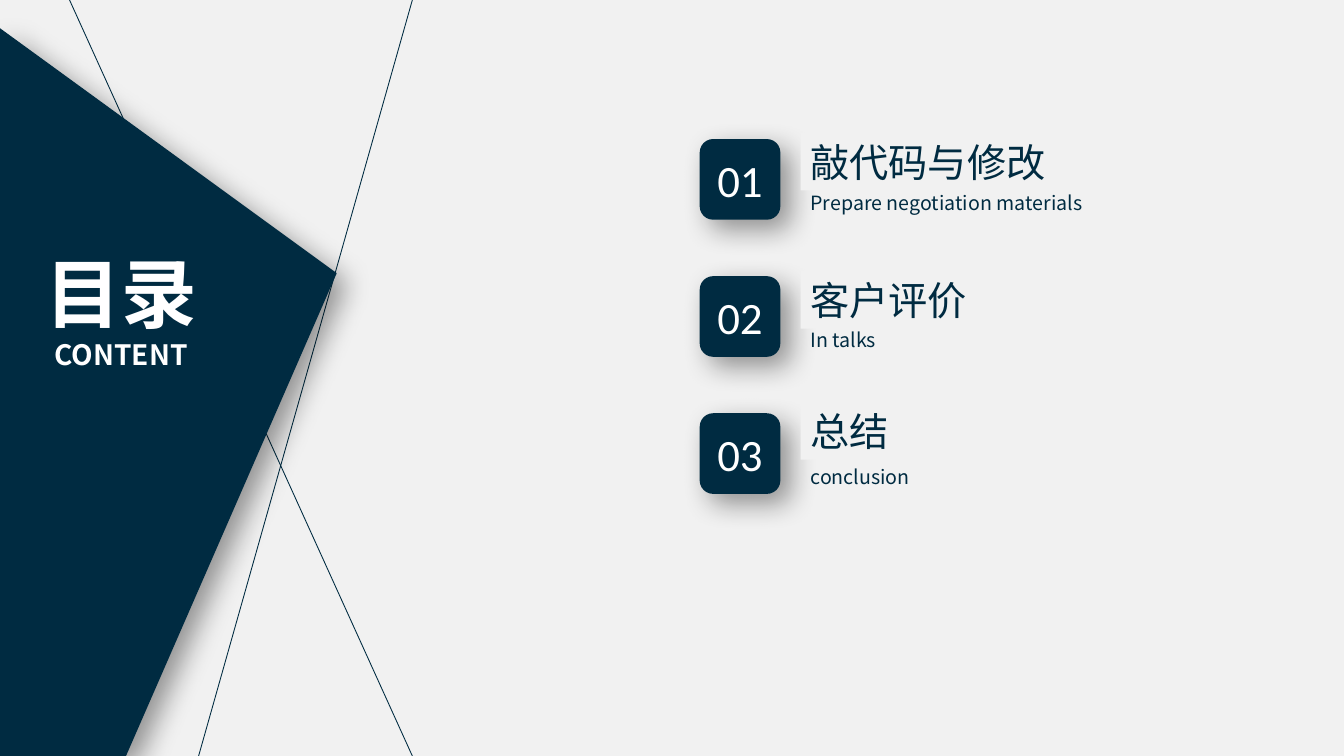
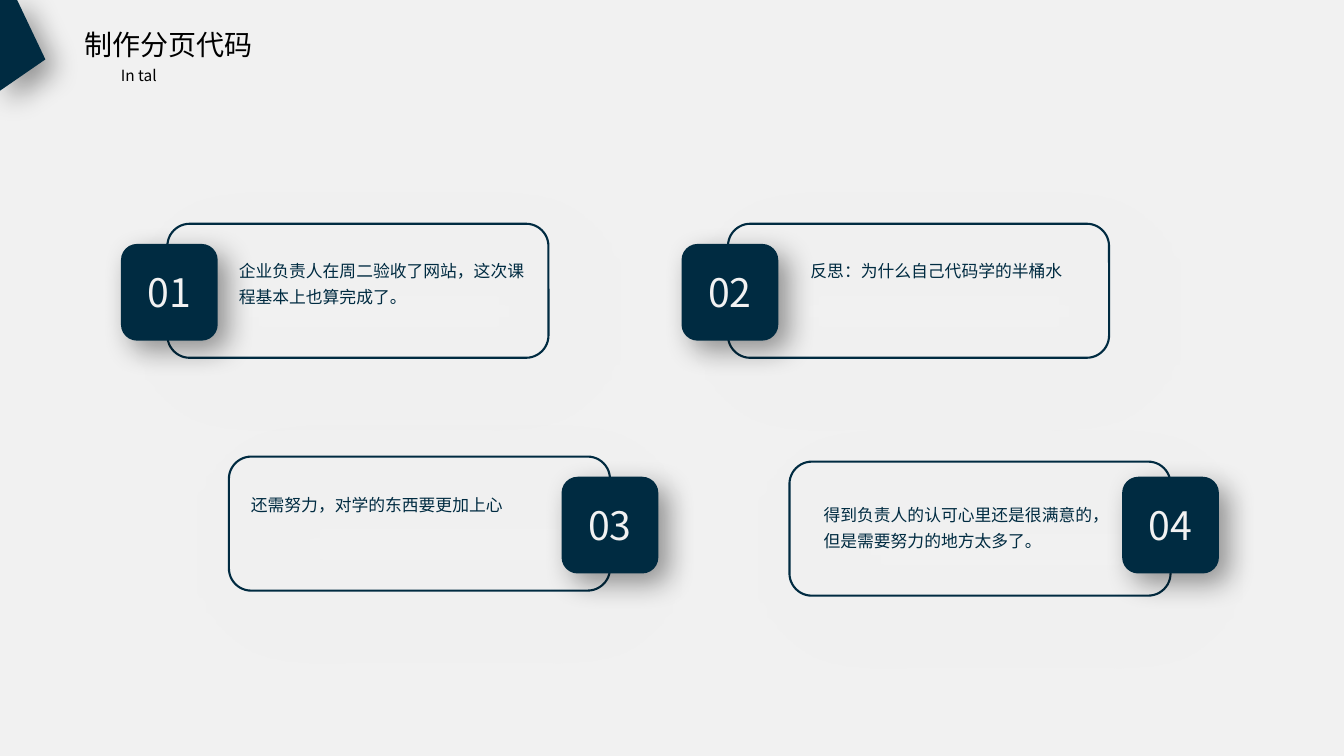
import pptx
import pptx.util
import pptx.dml.color
import pptx.enum.shapes
import pptx.enum.text
import pptx.oxml.ns
import lxml.etree

PX = 9144  # 100 px to the inch
WIDE, HIGH = 1333, 750
HUES = {
    "navy": "002B41", "back": "F1F1F1", "white": "FFFFFF",
    "pale": "F2F2F2", "black": "000000", "gray": "808080",
}
SANS, NUMS = "Noto Sans CJK SC", "Calibri"
DEEP = ("black", 40, 20, 10)  # hue, opacity %, blur pt, distance pt
SOFT = ("gray", 20, 50, 20)
FORM = pptx.enum.shapes.MSO_SHAPE
ALIGN = pptx.enum.text.PP_ALIGN
ANCHOR = pptx.enum.text.MSO_ANCHOR
Pt = pptx.util.Pt

TOPICS = [  # title, subtitle, title offset from its badge
    ("敲代码与修改", "Prepare negotiation materials", -6),
    ("客户评价", "In talks", -5),
    ("总结", "conclusion", -11),
]
CARDS = [  # words, frame top, left and top of the words
    ("企业负责人在周二验收了网站，这次课程基本上也算完成了。", 222, 227, 248),
    ("反思：为什么自己代码学的半桶水", 222, 794, 248),
    ("还需努力，对学的东西要更加上心", 453, 239, 480),
    ("得到负责人的认可心里还是很满意的，但是需要努力的地方太多了。", 458, 807, 490),
]


def hue(name):
    return pptx.dml.color.RGBColor.from_string(HUES[name])


def node(top, tag, **attrs):
    return lxml.etree.SubElement(top, pptx.oxml.ns.qn(tag), attrs)


# Shapes
def paint(shape, fill=None, line=None, shade=None):
    if fill:
        shape.fill.solid()
        shape.fill.fore_color.rgb = hue(fill)
    else:
        shape.fill.background()
    if line:
        shape.line.color.rgb = hue(line)
        shape.line.width = Pt(1.5)
    else:
        shape.line.fill.background()
    shape.shadow.inherit = False
    if shade:
        name, alpha, blur, dist = shade
        list_ = shape._element.spPr.find(pptx.oxml.ns.qn("a:effectLst"))
        cast = node(list_, "a:outerShdw", blurRad=str(Pt(blur)), dist=str(Pt(dist)),
                    dir=str(45 * 60000), algn="tl", rotWithShape="0")
        tint = node(cast, "a:srgbClr", val=HUES[name])
        node(tint, "a:alpha", val=str(alpha * 1000))


def box(slide, form, x, y, w, h, **look):
    shape = slide.shapes.add_shape(form, x * PX, y * PX, w * PX, h * PX)
    paint(shape, **look)
    return shape


def kite(slide, dots):
    pen = slide.shapes.build_freeform(*dots[0], scale=PX)
    pen.add_line_segments(dots[1:], close=True)
    paint(pen.convert_to_shape(), "navy", shade=DEEP)


def rule(slide, *ends):
    kind = pptx.enum.shapes.MSO_CONNECTOR.STRAIGHT
    line = slide.shapes.add_connector(kind, *(end * PX for end in ends))
    line.line.color.rgb = hue("navy")
    line.line.width = Pt(0.63)
    node(line._element.spPr, "a:effectLst")


# Text
def write(shape, rows, color, font=SANS, bold=False, align=ALIGN.LEFT,
          anchor=ANCHOR.TOP, wrap=True, lead=None):
    frame = shape.text_frame
    frame.word_wrap = wrap
    frame.vertical_anchor = anchor
    for i, (words, size) in enumerate(rows):
        para = frame.add_paragraph() if i else frame.paragraphs[0]
        para.alignment = align
        if lead:
            para.line_spacing = lead
        run = para.add_run()
        run.text = words
        run.font.size = Pt(size)
        run.font.name = font
        run.font.bold = bold
        run.font.color.rgb = hue(color)
        node(run.font._element, "a:ea", typeface=font)


def label(slide, x, y, w, h, rows, color, **style):
    shape = slide.shapes.add_textbox(x * PX, y * PX, w * PX, h * PX)
    write(shape, rows, color, **style)


def badge(slide, x, y, side, num, size, color, font):
    shape = box(slide, FORM.ROUNDED_RECTANGLE, x, y, side, side,
                fill="navy", shade=DEEP)
    write(shape, [(f"{num:02}", size)], color, font=font, align=ALIGN.CENTER,
          anchor=ANCHOR.MIDDLE, wrap=False)


# Slides
def index(slide):
    rule(slide, 409, 0, 197, HIGH)
    rule(slide, 409, HIGH, 69, 0)
    kite(slide, [(125, HIGH), (0, HIGH), (0, 28), (334, 271)])
    label(slide, 24, 240, 192, 135, [("目录", 54), ("CONTENT", 20)], "white",
          bold=True, align=ALIGN.CENTER)
    for i, (title, sub, rise) in enumerate(TOPICS):
        y = 138 + i * 136
        badge(slide, 694, y, 80, i + 1, 32, "white", NUMS)
        label(slide, 794, y + 46, 295, 34, [(sub, 14)], "navy")
        plate = box(slide, FORM.RECTANGLE, 794, y + rise, 426, 57, fill="back")
        write(plate, [(title, 28)], "navy")


def review(slide):
    label(slide, 73, 22, 188, 44, [("制作分页代码", 20)], "black",
          align=ALIGN.CENTER, wrap=False)
    label(slide, 110, 55, 306, 34, [("In tal", 11)], "black", lead=1.3)
    kite(slide, [(17, 0), (0, 0), (0, 90), (45, 59)])
    for i, (words, top, x, y) in enumerate(CARDS):
        row, col = divmod(i, 2)
        left = 120 + col * 556
        box(slide, FORM.ROUNDED_RECTANGLE, left + (46, 107)[row], top, 378, 133,
            line="navy", shade=SOFT)
        badge(slide, left + row * 437, 242 + row * 231, 96, i + 1, 28, "pale", SANS)
        label(slide, x, y, 306, 60, [(words, 12)], "navy", lead=1.3)


def main():
    deck = pptx.Presentation()
    deck.slide_width, deck.slide_height = WIDE * PX, HIGH * PX
    back = deck.slide_master.background.fill
    back.solid()
    back.fore_color.rgb = hue("back")
    for draw in (index, review):
        draw(deck.slides.add_slide(deck.slide_layouts[6]))
    deck.save("out.pptx")


if __name__ == "__main__":
    main()
